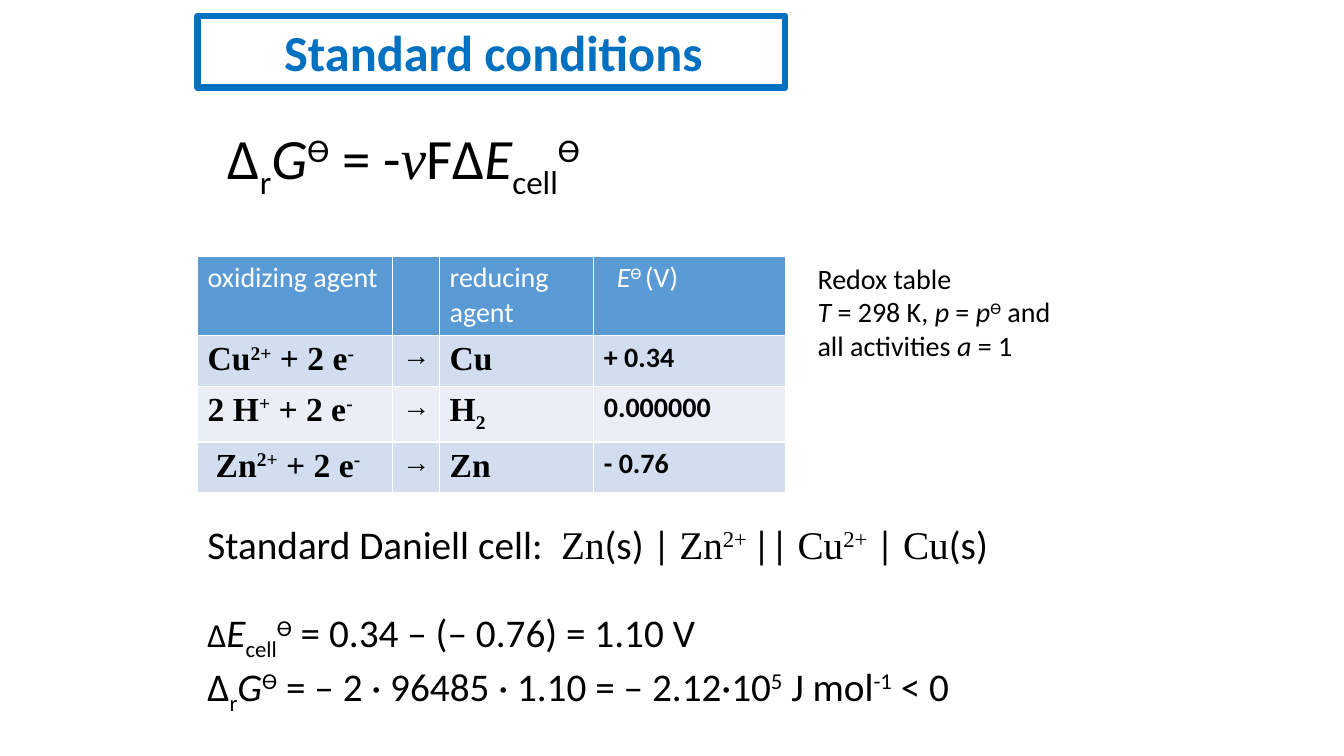
from dataclasses import dataclass
from typing import NamedTuple

from lxml.etree import SubElement
from pptx import Presentation
from pptx.dml.color import RGBColor
from pptx.enum.shapes import MSO_SHAPE as Shape
from pptx.enum.text import MSO_ANCHOR as Anchor, PP_ALIGN as Align
from pptx.oxml.ns import qn
from pptx.util import Inches, Pt

SANS, SERIF = "Calibri", "Times New Roman"
BLACK, WHITE, BLUE = "000000", "FFFFFF", "0070C0"
HEAD, BANDS = "5B9BD5", ("D2DEEF", "EAEFF7")
BASE = {"^": "30000", "_": "-25000"}
LEFT, WIDE = 1.96, 5.83


class Run(NamedTuple):
    """A piece of text; mark holds i (italic), ^ (raised) or _ (lowered)."""
    text: str
    mark: str = ""
    face: str | None = None
    size: float | None = None


@dataclass
class Text:
    lines: list[list[Run]]
    size: float
    face: str = SANS
    color: str = BLACK
    bold: bool = False
    align: Align = Align.LEFT


@dataclass
class Box:
    left: float
    top: float
    width: float
    height: float
    text: Text
    anchor: Anchor = Anchor.TOP


def rgb(code: str) -> RGBColor:
    return RGBColor.from_string(code)


def write(frame, text: Text) -> None:
    for n, line in enumerate(text.lines):
        para = frame.add_paragraph() if n else frame.paragraphs[0]
        para.alignment = text.align
        font = para.font
        font.size, font.name, font.bold = Pt(text.size), text.face, text.bold
        font.color.rgb = rgb(text.color)
        for part in line:
            run = para.add_run()
            run.text = part.text
            if "i" in part.mark:
                run.font.italic = True
            if part.face:
                run.font.name = part.face
            if part.size:
                run.font.size = Pt(part.size)
            for sign in BASE.keys() & set(part.mark):
                run._r.get_or_add_rPr().set("baseline", BASE[sign])


def draw(slide, box: Box) -> None:
    place = map(Inches, (box.left, box.top, box.width, box.height))
    frame = slide.shapes.add_textbox(*place).text_frame
    frame.word_wrap = True
    frame.vertical_anchor = box.anchor
    write(frame, box.text)


def edge(cell) -> None:
    """Give a cell thin white borders, which must precede its fill."""
    props = cell._tc.get_or_add_tcPr()
    for side in ("lnL", "lnR", "lnT", "lnB"):
        line = SubElement(props, qn(f"a:{side}"), w=str(Pt(1)))
        fill = SubElement(line, qn("a:solidFill"))
        SubElement(fill, qn("a:srgbClr"), val=WHITE)


def ion(name: str, charge: str) -> list[Run]:
    return [Run(name), Run(charge, "^"), Run(" + 2 e"), Run("-", "^")]


def head(*lines: list[Run]) -> Text:
    return Text(list(lines), 20, color=WHITE)


def entry(agent: list[Run], metal: list[Run], volts: str) -> list[Text]:
    return [
        Text([agent], 24, SERIF, bold=True),
        Text([[Run("→")]], 20, SERIF, bold=True),
        Text([metal], 24, SERIF, bold=True),
        Text([[Run(volts)]], 20, bold=True),
    ]


COLS = (1.93, 0.47, 1.53, 1.9)
ROWS = (0.79, 0.47, 0.53, 0.47)
CELLS = [
    [head([Run("oxidizing agent")]), head(),
     head([Run("reducing")], [Run("agent")]),
     head([Run("E", "i"), Run("Ɵ ", "^"), Run("(V)")])],
    entry(ion("Cu", "2+"), [Run("Cu")], "+ 0.34"),
    entry(ion("2 H", "+"), [Run("H"), Run("2", "_")], "0.000000"),
    entry(ion("Zn", "2+"), [Run("Zn")], "- 0.76"),
]
INDENT = {(0, 3): 0.23, (3, 0): 0.18}

GIBBS = [Run("r", "_"), Run("G", "i"), Run("Ɵ", "^")]
CELL = [Run("E", "i"), Run("cell", "_"), Run("Ɵ", "^")]

FORMULA = Text(
    [[Run("∆"), *GIBBS, Run(" = -"), Run("ν", "i", SERIF), Run("F∆"), *CELL]],
    40.7, align=Align.CENTER)
DANIELL = Text(
    [[Run("Standard Daniell cell: "), Run(" Zn", face=SERIF), Run("(s) | "),
      Run("Zn", face=SERIF), Run("2+ ", "^", SERIF), Run("|| "),
      Run("Cu", face=SERIF), Run("2+", "^", SERIF), Run(" | "),
      Run("Cu", face=SERIF), Run("(s)")]], 28)
RESULT = Text(
    [[Run("∆", size=24), *CELL, Run(" = 0.34 – (– 0.76) = 1.10 V")],
     [Run("∆"), *GIBBS, Run(" = – 2 · 96485 · 1.10 = – 2.12·10"),
      Run("5", "^"), Run(" J mol"), Run("-1", "^"), Run(" < 0")]], 28)
NOTE = Text(
    [[Run("Redox table")],
     [Run("T ", "i"), Run("= 298 K, "), Run("p", "i"), Run(" = "),
      Run("p", "i"), Run("Ɵ", "^"), Run(" and")],
     [Run("all activities "), Run("a", "i"), Run(" = 1")]], 20)
TITLE = Text([[Run("Standard conditions")]], 36, color=BLUE, bold=True,
             align=Align.CENTER)

BOXES = [
    Box(LEFT, 5.11, 8.43, 0.57, DANIELL),
    Box(LEFT, 5.99, 7.87, 1.04, RESULT),
    Box(8.01, 2.54, 3.15, 1.11, NOTE),
    Box(2.18, 0.16, 5.43, 0.71, TITLE),
]


def grid(slide) -> None:
    place = map(Inches, (LEFT, 2.54, WIDE, sum(ROWS)))
    table = slide.shapes.add_table(len(ROWS), len(COLS), *place).table
    table.first_row = table.horz_banding = False
    for col, width in zip(table.columns, COLS):
        col.width = Inches(width)
    for r, texts in enumerate(CELLS):
        table.rows[r].height = Inches(ROWS[r])
        for c, text in enumerate(texts):
            cell = table.cell(r, c)
            edge(cell)
            cell.fill.solid()
            cell.fill.fore_color.rgb = rgb(BANDS[(r - 1) % 2] if r else HEAD)
            cell.margin_left = Inches(INDENT.get((r, c), 0.1))
            write(cell.text_frame, text)


def frame(slide) -> None:
    place = map(Inches, (LEFT, 0.16, WIDE, 0.71))
    rect = slide.shapes.add_shape(Shape.RECTANGLE, *place)
    rect.shadow.inherit = False
    rect.fill.background()
    rect.line.color.rgb = rgb(BLUE)
    rect.line.width = Pt(4.5)


def main() -> None:
    deck = Presentation()
    deck.slide_width, deck.slide_height = Inches(13.33), Inches(7.5)
    slide = deck.slides.add_slide(deck.slide_layouts[6])
    draw(slide, Box(LEFT, 0.98, 4.09, 1.25, FORMULA, Anchor.MIDDLE))
    grid(slide)
    for box in BOXES:
        draw(slide, box)
    frame(slide)
    deck.save("out.pptx")


if __name__ == "__main__":
    main()
